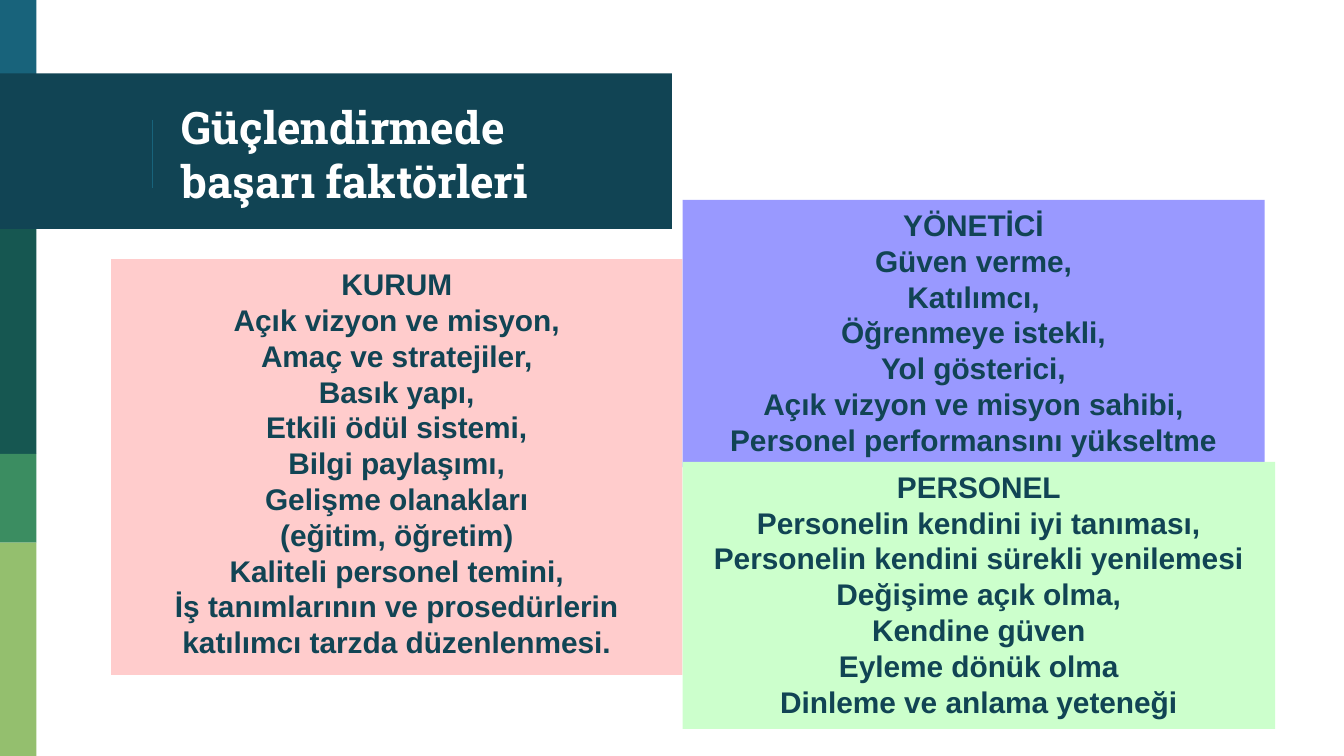
from lxml import etree
from pptx import Presentation
from pptx.dml.color import RGBColor
from pptx.enum.shapes import MSO_CONNECTOR, MSO_SHAPE
from pptx.enum.text import MSO_ANCHOR, PP_ALIGN
from pptx.oxml.ns import qn
from pptx.util import Cm, Pt

RECTANGLE = MSO_SHAPE.RECTANGLE
STRAIGHT = MSO_CONNECTOR.STRAIGHT
TOP, MIDDLE = MSO_ANCHOR.TOP, MSO_ANCHOR.MIDDLE
LEFT, CENTER = PP_ALIGN.LEFT, PP_ALIGN.CENTER
TITLE_ONLY = 5

COLORS = {
    "blue": "18637B",
    "navy": "114454",
    "pine": "165751",
    "green": "3B8D61",
    "lime": "94BF6E",
    "pink": "FFCCCC",
    "violet": "9999FF",
    "mint": "CCFFCC",
    "white": "FFFFFF",
}

BLOCKS = [
    (0, 0, 0.69, 1.47, "blue"),
    (0, 1.39, 12.7, 2.94, "navy"),
    (0, 4.33, 0.69, 4.25, "pine"),
    (0, 8.58, 0.69, 1.68, "green"),
    (0, 10.26, 0.69, 4.03, "lime"),
]

CARDS = [
    ((2.1, 4.9, 10.8, 7.86, "pink"), [
        "KURUM",
        "Açık vizyon ve misyon,",
        "Amaç ve stratejiler,",
        "Basık yapı,",
        "Etkili ödül sistemi,",
        "Bilgi paylaşımı,",
        "Gelişme olanakları",
        "(eğitim, öğretim)",
        "Kaliteli personel temini,",
        "İş tanımlarının ve prosedürlerin katılımcı tarzda düzenlenmesi.",
    ]),
    ((12.9, 3.78, 11, 5.05, "violet"), [
        "YÖNETİCİ",
        "Güven verme,",
        "Katılımcı,",
        "Öğrenmeye istekli,",
        "Yol gösterici,",
        "Açık vizyon ve misyon sahibi,",
        "Personel performansını yükseltme",
    ]),
    ((12.9, 8.73, 11.2, 5.05, "mint"), [
        "PERSONEL",
        "Personelin kendini iyi tanıması,",
        "Personelin kendini sürekli yenilemesi",
        "Değişime açık olma,",
        "Kendine güven",
        "Eyleme dönük olma",
        "Dinleme ve anlama yeteneği",
    ]),
]


class SlideBuilder:
    """Draws styled elements on the current slide."""

    title_font, body_font = "Roboto Slab", "Arial"
    title_size, body_size = Pt(24), Pt(16)

    def __init__(self, slide):
        self.slide = slide

    def color(self, name):
        return RGBColor.from_string(COLORS[name])

    def format_paragraph(self, paragraph, name, size, color, alignment):
        paragraph.alignment = alignment
        font = paragraph.font
        font.name, font.size, font.bold = name, size, True
        font.color.rgb = self.color(color)

    def block(self, left, top, width, height, color):
        shape = self.slide.shapes.add_shape(
            RECTANGLE, Cm(left), Cm(top), Cm(width), Cm(height))
        shape.shadow.inherit = False
        shape.fill.solid()
        shape.fill.fore_color.rgb = self.color(color)
        shape.line.fill.background()
        return shape

    def card(self, box, lines):
        frame = self.block(*box).text_frame
        frame.word_wrap = True
        frame.vertical_anchor = TOP
        frame.text = "\n".join(lines)
        for paragraph in frame.paragraphs:
            self.format_paragraph(
                paragraph, self.body_font, self.body_size, "navy", CENTER)

    def rule(self, x, top, bottom):
        connector = self.slide.shapes.add_connector(
            STRAIGHT, Cm(x), Cm(top), Cm(x), Cm(bottom))
        connector.line.color.rgb = self.color("blue")
        connector.line.width = Pt(0.75)
        etree.SubElement(connector.element.spPr, qn("a:effectLst"))

    def title(self, text, left, top, width, height):
        shape = self.slide.shapes.title
        shape.left, shape.top = Cm(left), Cm(top)
        shape.width, shape.height = Cm(width), Cm(height)
        shape.element.getparent().append(shape.element)
        frame = shape.text_frame
        frame.text = text
        frame.word_wrap = True
        frame.vertical_anchor = MIDDLE
        frame.margin_left = frame.margin_right = Cm(0.25)
        frame.margin_top = frame.margin_bottom = Cm(0.25)
        self.format_paragraph(
            frame.paragraphs[0], self.title_font, self.title_size, "white", LEFT)


def main():
    presentation = Presentation()
    presentation.slide_width, presentation.slide_height = Cm(25.4), Cm(14.29)
    layout = presentation.slide_layouts[TITLE_ONLY]
    builder = SlideBuilder(presentation.slides.add_slide(layout))
    for block in BLOCKS:
        builder.block(*block)
    builder.rule(2.88, 2.26, 3.56)
    builder.title("Güçlendirmede başarı faktörleri", 3.18, 1.48, 8.92, 2.84)
    for box, lines in CARDS:
        builder.card(box, lines)
    presentation.save("out.pptx")


if __name__ == "__main__":
    main()
